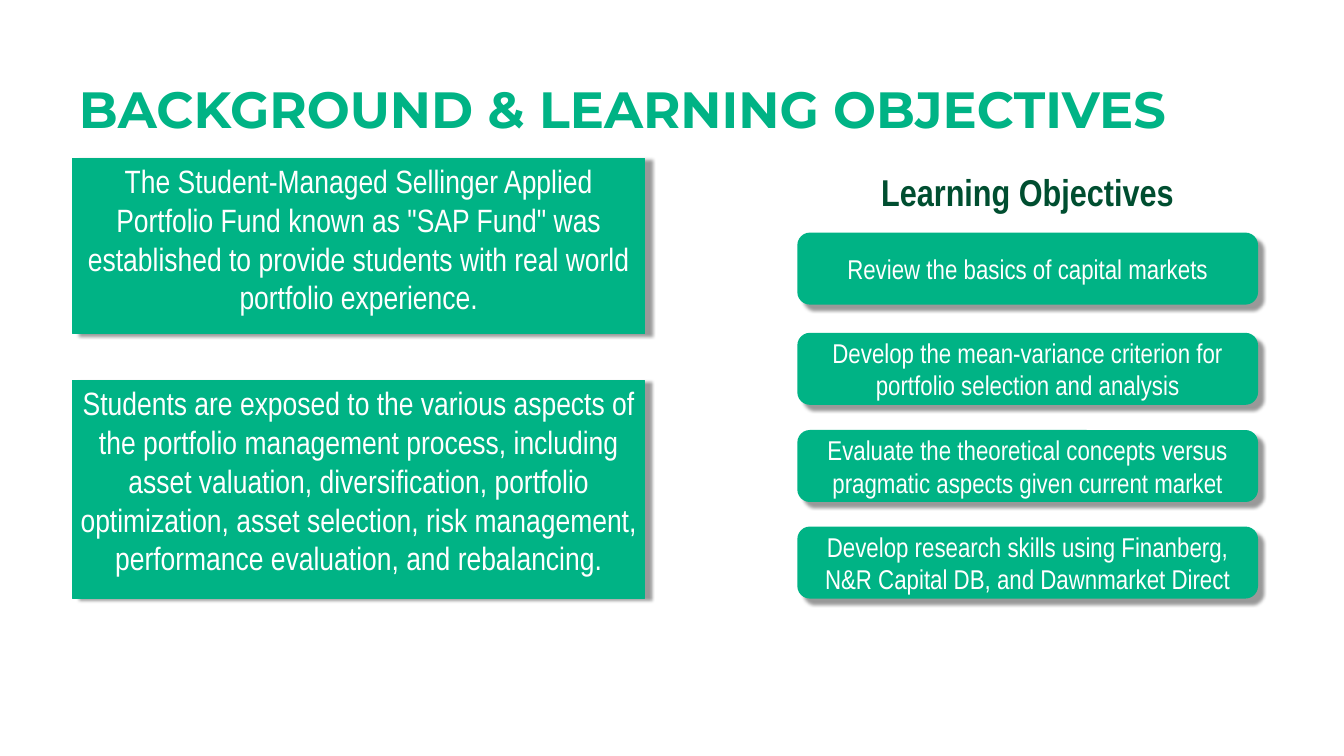
from dataclasses import dataclass

import pptx
import pptx.dml.color
import pptx.enum.shapes
import pptx.enum.text
import pptx.oxml
import pptx.oxml.ns
import pptx.shapes.autoshape
import pptx.slide
import pptx.util
from pptx.util import Inches

GREEN = "00B385"
DARK_GREEN = "004E30"
WHITE = "FFFFFF"
NARROW = "Arial Narrow"

MARGIN, BACKGROUND_WIDTH = 1.19, 9.36
OBJECTIVES_LEFT, OBJECTIVES_WIDTH, OBJECTIVE_HEIGHT = 13.06, 7.51, 1.15
CONTENT_TOP = 2.59

Align = pptx.enum.text.PP_ALIGN
Anchor = pptx.enum.text.MSO_ANCHOR
Geometry = pptx.enum.shapes.MSO_SHAPE
Shape = pptx.shapes.autoshape.Shape


@dataclass(frozen=True)
class TextStyle:
    size: float
    color: str = WHITE
    font: str = NARROW
    bold: bool = False
    align: Align = Align.CENTER
    anchor: Anchor = Anchor.MIDDLE
    line_spacing: float = 1.0


@dataclass(frozen=True)
class CardStyle:
    line_width: float
    shadow_distance: float
    shadow_angle: int


@dataclass(frozen=True)
class Objective:
    top: float
    text: str


TITLE_TEXT = TextStyle(60, GREEN, "Montserrat", True, Align.LEFT, Anchor.BOTTOM, 0.8)
HEADING_TEXT = TextStyle(44, DARK_GREEN, bold=True)
BACKGROUND_TEXT = TextStyle(38, anchor=Anchor.TOP)
OBJECTIVE_TEXT = TextStyle(32)
BACKGROUND_CARD = CardStyle(0.75, 8, 16)
OBJECTIVE_CARD = CardStyle(2, 9, 45)

FUND_PURPOSE = (
    'The Student-Managed Sellinger Applied Portfolio Fund known as "SAP Fund" '
    "was established to provide students with real world portfolio experience."
)
STUDENT_EXPOSURE = (
    "Students are exposed to the various aspects of the portfolio management "
    "process, including asset valuation, diversification, portfolio optimization, "
    "asset selection, risk management, performance evaluation, and rebalancing."
)
OBJECTIVES = [
    Objective(3.82, "Review the basics of capital markets"),
    Objective(5.46, "Develop the mean-variance criterion for portfolio selection and analysis"),
    Objective(7.05, "Evaluate the theoretical concepts versus pragmatic aspects given current market"),
    Objective(8.63, "Develop research skills using Finanberg, N&R Capital DB, and Dawnmarket Direct"),
]


def rgb(color: str) -> pptx.dml.color.RGBColor:
    return pptx.dml.color.RGBColor.from_string(color)


def place(shape: Shape, left: float, top: float, width: float, height: float) -> None:
    shape.left, shape.top = Inches(left), Inches(top)
    shape.width, shape.height = Inches(width), Inches(height)


def write(shape: Shape, text: str, style: TextStyle) -> None:
    frame = shape.text_frame
    frame.text = text
    frame.word_wrap = True
    frame.auto_size = pptx.enum.text.MSO_AUTO_SIZE.NONE
    frame.vertical_anchor = style.anchor
    paragraph = frame.paragraphs[0]
    paragraph.alignment = style.align
    paragraph.line_spacing = style.line_spacing
    paragraph.space_before = pptx.util.Pt(0)
    font = paragraph.runs[0].font
    font.name, font.size, font.bold = style.font, pptx.util.Pt(style.size), style.bold
    font.color.rgb = rgb(style.color)


def remove_bullet(shape: Shape) -> None:
    properties = shape.text_frame.paragraphs[0]._p.get_or_add_pPr()
    properties.set("marL", "0")
    properties.set("indent", "0")
    properties.append(pptx.oxml.parse_xml(f'<a:buNone {pptx.oxml.ns.nsdecls("a")}/>'))


def style_card(shape: Shape, card: CardStyle) -> None:
    """Give a shape the green fill, outline and soft offset shadow."""
    shape.fill.solid()
    shape.fill.fore_color.rgb = rgb(GREEN)
    shape.line.color.rgb = rgb(GREEN)
    shape.line.width = pptx.util.Pt(card.line_width)
    shape.shadow.inherit = False
    effects = shape.element.spPr.find(pptx.oxml.ns.qn("a:effectLst"))
    effects.append(pptx.oxml.parse_xml(
        f'<a:outerShdw {pptx.oxml.ns.nsdecls("a")} blurRad="{pptx.util.Pt(4)}" '
        f'dist="{pptx.util.Pt(card.shadow_distance)}" dir="{card.shadow_angle * 60000}" '
        'algn="tl" rotWithShape="0"><a:srgbClr val="000000">'
        '<a:alpha val="40000"/></a:srgbClr></a:outerShdw>'
    ))


def add_card(slide: pptx.slide.Slide, geometry: Geometry, left: float, top: float,
             width: float, height: float, card: CardStyle, text: str, style: TextStyle) -> None:
    shape = slide.shapes.add_shape(
        geometry, Inches(left), Inches(top), Inches(width), Inches(height))
    style_card(shape, card)
    write(shape, text, style)


def main() -> None:
    deck = pptx.Presentation()
    deck.slide_width, deck.slide_height = Inches(21.99), Inches(12.37)
    slide = deck.slides.add_slide(deck.slide_layouts.get_by_name("Title and Content"))

    title = slide.shapes.title
    place(title, MARGIN, -0.35, 19.79, 2.66)
    write(title, "BACKGROUND & LEARNING OBJECTIVES", TITLE_TEXT)

    purpose = slide.placeholders[1]
    place(purpose, MARGIN, CONTENT_TOP, BACKGROUND_WIDTH, 2.87)
    style_card(purpose, BACKGROUND_CARD)
    write(purpose, FUND_PURPOSE, BACKGROUND_TEXT)
    remove_bullet(purpose)

    add_card(slide, Geometry.RECTANGLE, MARGIN, 6.23, BACKGROUND_WIDTH, 3.56,
             BACKGROUND_CARD, STUDENT_EXPOSURE, BACKGROUND_TEXT)

    heading = slide.shapes.add_textbox(
        Inches(OBJECTIVES_LEFT), Inches(CONTENT_TOP), Inches(OBJECTIVES_WIDTH), Inches(1.1))
    write(heading, "Learning Objectives", HEADING_TEXT)

    for objective in OBJECTIVES:
        add_card(slide, Geometry.ROUNDED_RECTANGLE, OBJECTIVES_LEFT, objective.top,
                 OBJECTIVES_WIDTH, OBJECTIVE_HEIGHT, OBJECTIVE_CARD,
                 objective.text, OBJECTIVE_TEXT)

    deck.save("out.pptx")


if __name__ == "__main__":
    main()
